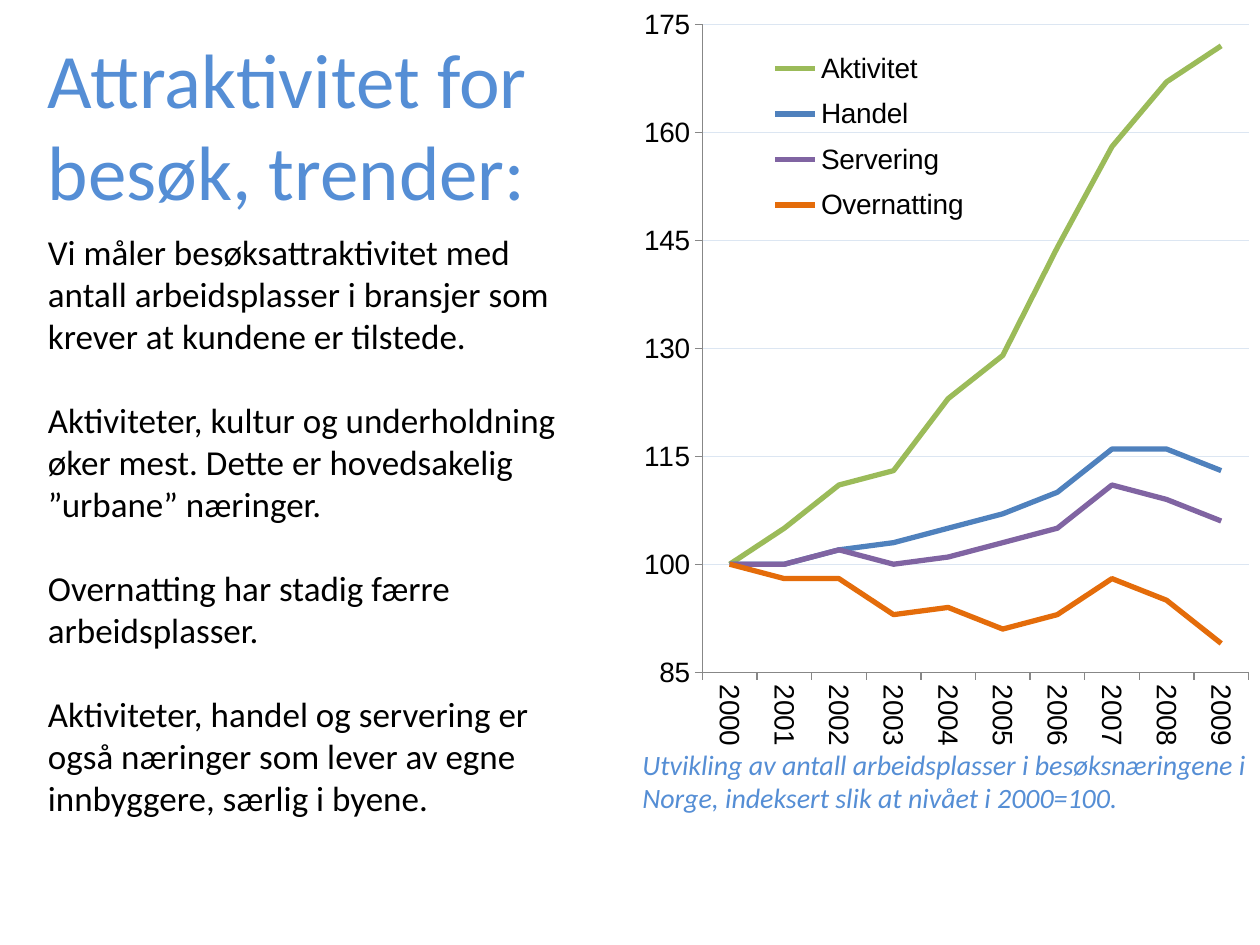
from dataclasses import dataclass

from lxml.etree import SubElement
from pptx import Presentation
from pptx.chart.data import CategoryChartData
from pptx.dml.color import RGBColor
from pptx.enum.chart import XL_CHART_TYPE, XL_LEGEND_POSITION, XL_TICK_MARK
from pptx.enum.text import MSO_ANCHOR, MSO_AUTO_SIZE, PP_ALIGN
from pptx.oxml import parse_xml
from pptx.oxml.ns import nsdecls, qn
from pptx.util import Inches, Pt

BLUE, BLACK, WHITE = "558ED5", "000000", "FFFFFF"
GRID, AXIS = "DCE6F2", "878787"
YEARS = [str(year) for year in range(2000, 2010)]


@dataclass
class Trend:
    name: str
    color: str
    values: list[int]


TRENDS = [
    Trend("Aktivitet", "9BBB59", [100, 105, 111, 113, 123, 129, 144, 158, 167, 172]),
    Trend("Handel", "4F81BD", [100, 100, 102, 103, 105, 107, 110, 116, 116, 113]),
    Trend("Servering", "8064A2", [100, 100, 102, 100, 101, 103, 105, 111, 109, 106]),
    Trend("Overnatting", "E46C0A", [100, 98, 98, 93, 94, 91, 93, 98, 95, 89]),
]
TITLE = "Attraktivitet for besøk, trender:"
BODY = [
    "Vi måler besøksattraktivitet med antall arbeidsplasser i bransjer som "
    "krever at kundene er tilstede.",
    "Aktiviteter, kultur og underholdning øker mest. Dette er hovedsakelig "
    "”urbane” næringer.",
    "Overnatting har stadig færre arbeidsplasser.",
    "Aktiviteter, handel og servering er også næringer som lever av egne "
    "innbyggere, særlig i byene.",
]
CAPTION = ("Utvikling av antall arbeidsplasser i besøksnæringene i Norge, "
           "indeksert slik at nivået i 2000=100.")


def rgb(color: str) -> RGBColor:
    return RGBColor.from_string(color)


def place(sp, left: float, top: float, width: float, height: float) -> None:
    sp.left, sp.top = Inches(left), Inches(top)
    sp.width, sp.height = Inches(width), Inches(height)


def write(sp, *texts: str, size: int, color: str = BLACK, italic: bool = False,
          gap: float = 0) -> None:
    """Fill a shape with plain unbulleted paragraphs, gap points apart."""
    tf = sp.text_frame
    tf.word_wrap = True
    tf.auto_size = MSO_AUTO_SIZE.NONE
    tf.vertical_anchor = MSO_ANCHOR.TOP
    for i, text in enumerate(texts):
        p = tf.add_paragraph() if i else tf.paragraphs[0]
        p.alignment = PP_ALIGN.LEFT
        p.space_before = Pt(gap if i else 0)
        pPr = p._p.get_or_add_pPr()
        pPr.set("marL", "0")
        pPr.set("indent", "0")
        SubElement(pPr, qn("a:buNone"))
        r = p.add_run()
        r.text = text
        r.font.name, r.font.size, r.font.italic = "Calibri", Pt(size), italic
        r.font.color.rgb = rgb(color)


def set_layout(parent, index: int, x: float, y: float, w: float, h: float,
               inner: bool = False) -> None:
    """Give a chart part a manual layout in fractions of the chart."""
    for old in parent.findall(qn("c:layout")):
        parent.remove(old)
    target = '<c:layoutTarget val="inner"/>' if inner else ""
    parent.insert(index, parse_xml(
        f'<c:layout {nsdecls("c")}><c:manualLayout>{target}'
        '<c:xMode val="edge"/><c:yMode val="edge"/>'
        f'<c:x val="{x}"/><c:y val="{y}"/><c:w val="{w}"/><c:h val="{h}"/>'
        '</c:manualLayout></c:layout>'))


def add_trend_chart(s, trends: list[Trend]) -> None:
    data = CategoryChartData(number_format="0")
    data.categories = YEARS
    for trend in trends:
        data.add_series(trend.name, trend.values)
    chart = s.shapes.add_chart(XL_CHART_TYPE.LINE, Inches(5), Inches(0),
                               Inches(5), Inches(6.03), data).chart
    chart.has_title = False
    chart.font.name, chart.font.size = "Arial", Pt(16)
    chart.font.color.rgb = rgb(BLACK)

    chart.plots[0].vary_by_categories = False
    for series, trend in zip(chart.plots[0].series, trends):
        series.smooth = False
        series.format.line.color.rgb = rgb(trend.color)
        series.format.line.width = Pt(3)

    for axis in (chart.category_axis, chart.value_axis):
        axis.major_tick_mark = XL_TICK_MARK.OUTSIDE
        axis.minor_tick_mark = XL_TICK_MARK.NONE
        axis.format.line.color.rgb = rgb(AXIS)
        axis.format.line.width = Pt(0.75)
        axis.tick_labels.font.size = Pt(16)
    years = chart.category_axis
    years.tick_labels.font.color.rgb = rgb(BLACK)
    years._element.txPr.find(qn("a:bodyPr")).set("rot", "5400000")
    index = chart.value_axis
    index.minimum_scale, index.maximum_scale, index.major_unit = 85, 175, 15
    index.tick_labels.number_format = "0"
    index.tick_labels.number_format_is_linked = False
    index.major_gridlines.format.line.color.rgb = rgb(GRID)
    index.major_gridlines.format.line.width = Pt(0.75)

    chart.has_legend = True
    legend = chart.legend
    legend.position = XL_LEGEND_POSITION.RIGHT
    legend.include_in_layout = False
    legend.font.size = Pt(16)
    set_layout(legend._element, 1, 0.2, 0.05, 0.36, 0.26)
    plot_area = chart._chartSpace.chart.plotArea
    set_layout(plot_area, 0, 0.115, 0.032, 0.867, 0.853, inner=True)


def main() -> None:
    prs = Presentation()
    prs.slide_width, prs.slide_height = Inches(10), Inches(7.5)
    s = prs.slides.add_slide(prs.slide_layouts[1])
    add_trend_chart(s, TRENDS)

    caption = s.shapes.add_textbox(0, 0, 0, 0)
    place(caption, 5, 5.88, 5, 1.18)
    write(caption, CAPTION, size=16, color=BLUE, italic=True)

    body = s.placeholders[1]
    place(body, 0.28, 1.78, 4.49, 5.49)
    write(body, *BODY, size=20, gap=24)

    title = s.shapes.title
    place(title, 0.28, 0.2, 4.49, 1.58)
    title.fill.solid()
    title.fill.fore_color.rgb = rgb(WHITE)
    write(title, TITLE, size=44, color=BLUE)

    prs.save("out.pptx")


if __name__ == "__main__":
    main()
